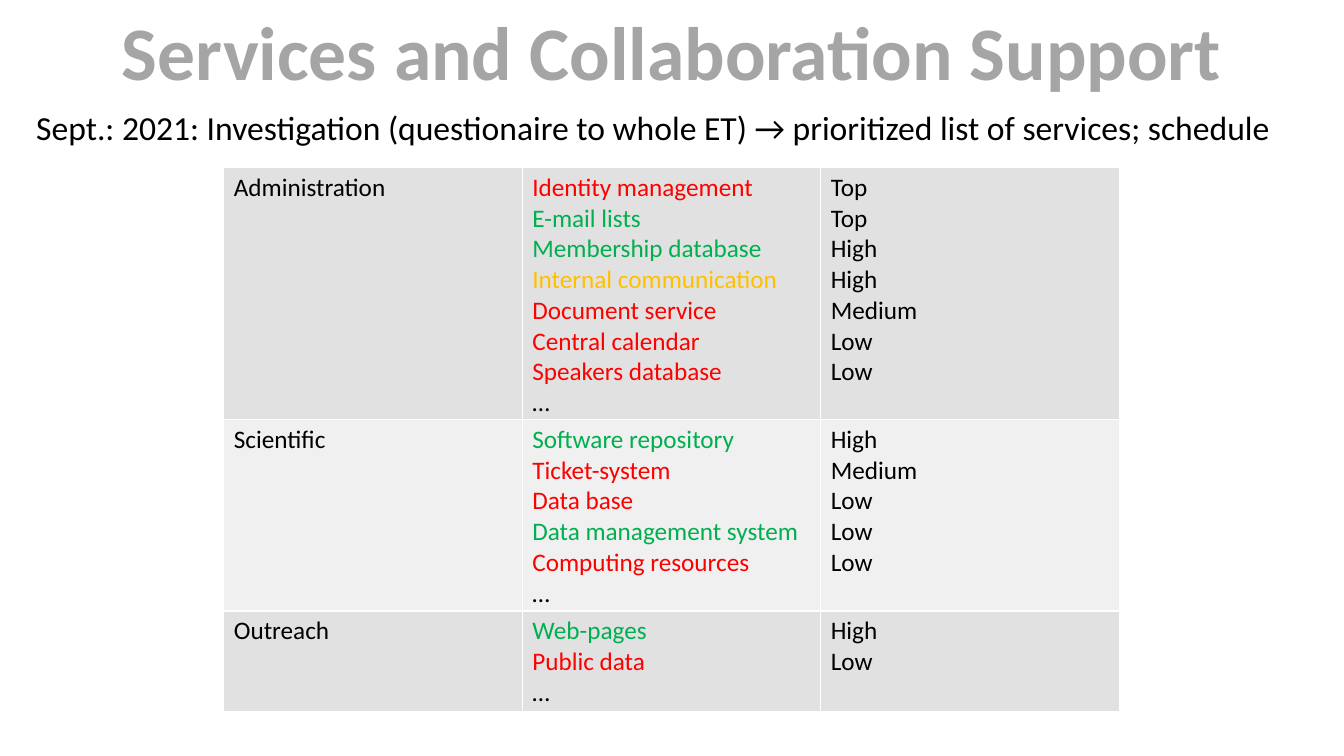
"""Build the services and collaboration support slide."""
from lxml import etree
from pptx import Presentation
from pptx.dml.color import RGBColor
from pptx.enum.text import MSO_ANCHOR, PP_ALIGN
from pptx.oxml.ns import qn
from pptx.util import Inches, Pt

TOP = MSO_ANCHOR.TOP
LEFT, CENTER = PP_ALIGN.LEFT, PP_ALIGN.CENTER
FONT = "Calibri"
COLORS = {
    "title": "A5A5A5", "text": "000000", "border": "FFFFFF",
    "open": "FF0000", "done": "00B050", "partial": "FFC000",
    "dark band": "E1E1E1", "light band": "F0F0F0",
}

TITLE = "Services and Collaboration Support"
SUBTITLE = ("Sept.: 2021: Investigation (questionaire to whole ET) "
            "→ prioritized list of services; schedule")
SERVICES = [
    ("Administration", [
        ("Identity management", "open", "Top"),
        ("E-mail lists", "done", "Top"),
        ("Membership database", "done", "High"),
        ("Internal communication", "partial", "High"),
        ("Document service", "open", "Medium"),
        ("Central calendar", "open", "Low"),
        ("Speakers database", "open", "Low"),
    ]),
    ("Scientific", [
        ("Software repository", "done", "High"),
        ("Ticket-system", "open", "Medium"),
        ("Data base", "open", "Low"),
        ("Data management system", "done", "Low"),
        ("Computing resources", "open", "Low"),
    ]),
    ("Outreach", [
        ("Web-pages", "done", "High"),
        ("Public data", "open", "Low"),
    ]),
]
TABLE_LEFT, TABLE_TOP = 2.22, 1.66
COL_WIDTH, LINE_HEIGHT, CELL_PADDING = 2.96, 0.3, 0.1


def rgb(name):
    return RGBColor.from_string(COLORS[name])


def write(tf, lines, size, bold=False, align=LEFT):
    """Write one paragraph for each (text, color name) pair."""
    for i, (text, color) in enumerate(lines):
        p = tf.add_paragraph() if i else tf.paragraphs[0]
        p.alignment = align
        r = p.add_run()
        r.text = text
        r.font.name = FONT
        r.font.size = Pt(size)
        r.font.bold = bold
        r.font.color.rgb = rgb(color)


def add_borders(cell):
    """Put a thin line on each side of a cell, ahead of its fill."""
    tc_pr = cell._tc.get_or_add_tcPr()
    for i, side in enumerate(("lnL", "lnR", "lnT", "lnB")):
        ln = etree.Element(qn(f"a:{side}"), w=str(Pt(1)))
        fill = etree.SubElement(ln, qn("a:solidFill"))
        etree.SubElement(fill, qn("a:srgbClr"), val=COLORS["border"])
        tc_pr.insert(i, ln)


def add_services(s):
    """Add the table with one row for each group of services."""
    heights = [LINE_HEIGHT * (len(items) + 1) + CELL_PADDING
               for _, items in SERVICES]
    table = s.shapes.add_table(
        len(SERVICES), 3, Inches(TABLE_LEFT), Inches(TABLE_TOP),
        Inches(3 * COL_WIDTH), Inches(sum(heights))).table
    table.first_row = False
    for col in table.columns:
        col.width = Inches(COL_WIDTH)
    for i, (group, items) in enumerate(SERVICES):
        table.rows[i].height = Inches(heights[i])
        columns = (
            [(group, "text")],
            [(name, state) for name, state, _ in items] + [("…", "text")],
            [(priority, "text") for _, _, priority in items],
        )
        for cell, lines in zip(table.rows[i].cells, columns):
            write(cell.text_frame, lines, 18)
            cell.fill.solid()
            cell.fill.fore_color.rgb = rgb("light band" if i % 2 else "dark band")
            add_borders(cell)


def main():
    prs = Presentation()
    prs.slide_width, prs.slide_height = Inches(13.33), Inches(7.5)
    s = prs.slides.add_slide(prs.slide_layouts[5])

    title = s.shapes.title
    title.left, title.top = Inches(1.05), Inches(0)
    title.width, title.height = Inches(11.23), Inches(1.01)
    title.text_frame.word_wrap = False
    title.text_frame.vertical_anchor = TOP
    write(title.text_frame, [(TITLE, "title")], 54, True, CENTER)

    sp = s.shapes.add_textbox(Inches(0.26), Inches(1.01), Inches(12.58), Inches(0.5))
    sp.text_frame.word_wrap = False
    write(sp.text_frame, [(SUBTITLE, "text")], 24)

    add_services(s)
    prs.save("out.pptx")


if __name__ == "__main__":
    main()
